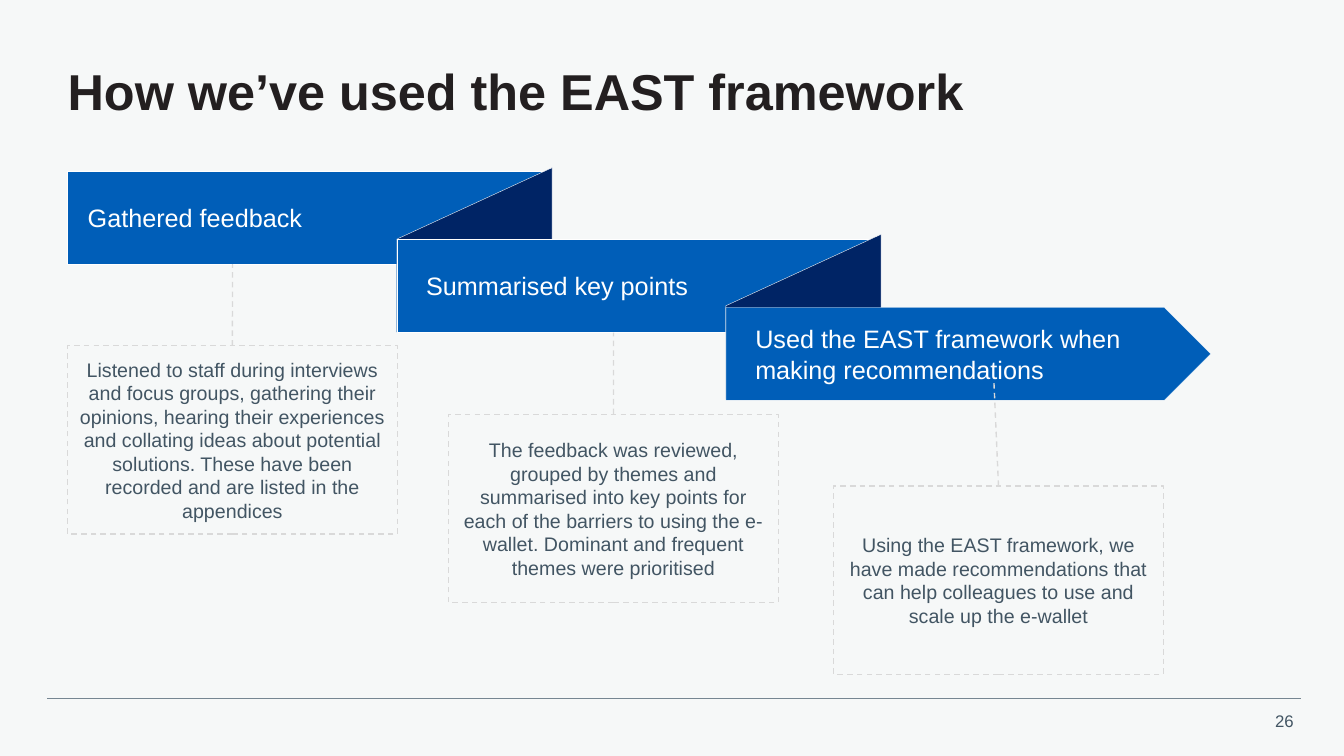
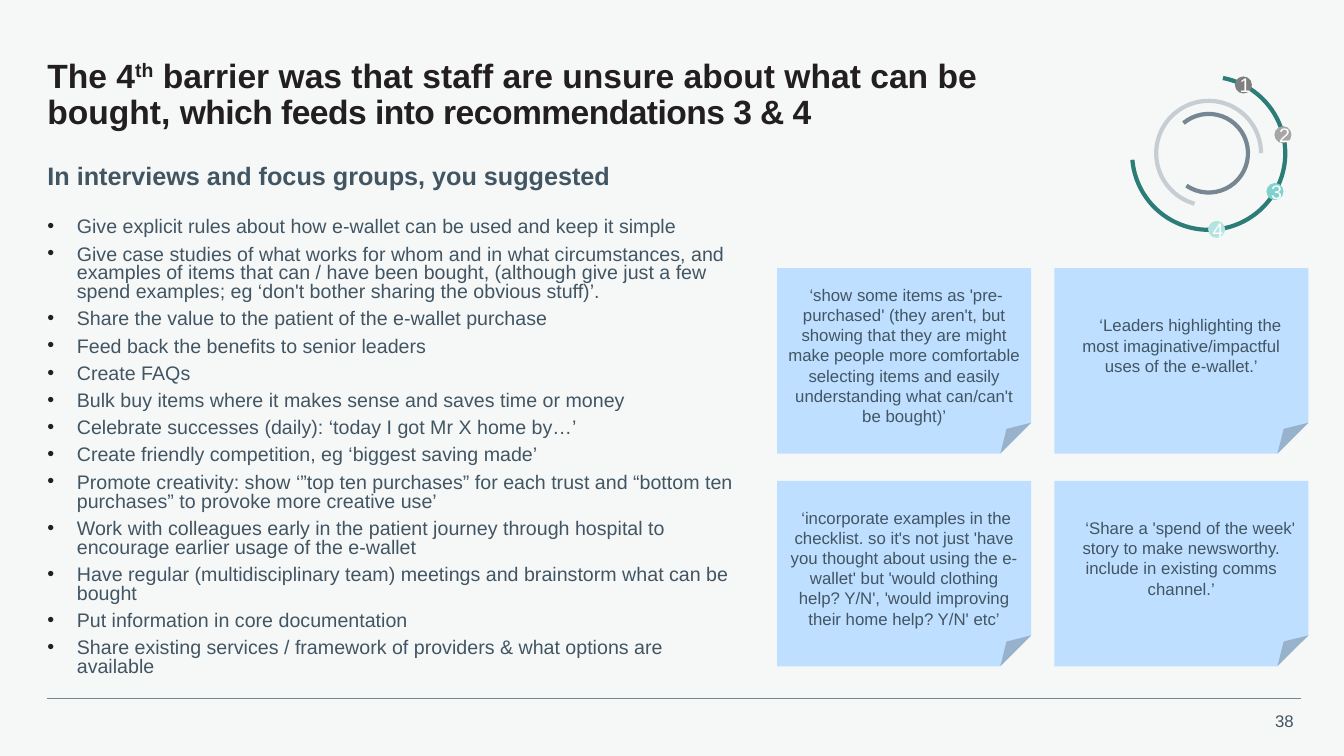
import math

from lxml import etree
from pptx import Presentation
from pptx import util as u
from pptx.dml.color import RGBColor
from pptx.enum import dml, shapes, text
from pptx.oxml.ns import qn

COLOURS = {
    "background": "F6F8F8", "title": "231F20", "body": "425563", "white": "FFFFFF",
    "rule": "768692", "band": "005EB8", "fold": "002465", "dash": "D9D9D9",
    "note": "BEDFFF", "inner": "768692", "middle": "C7CED3", "outer": "2C7D77",
    "dot1": "7F7F7F", "dot2": "A6A6A6", "dot3": "80D2CC", "dot4": "B3E4E0",
}
FONT = "Arial"
CENTER, RIGHT = text.PP_ALIGN.CENTER, text.PP_ALIGN.RIGHT
MIDDLE, TOP = text.MSO_ANCHOR.MIDDLE, text.MSO_ANCHOR.TOP
PRESET = shapes.MSO_SHAPE


def colour(name):
    return RGBColor.from_string(COLOURS[name])


class Deck:
    """Holds the style and the current slide; lengths are percent of the slide."""

    def __init__(self):
        self.presentation = Presentation()
        self.presentation.slide_width = u.Inches(13.33)
        self.presentation.slide_height = u.Inches(7.5)
        self.slide = None

    def x(self, share):
        return u.Emu(round(self.presentation.slide_width * share / 100))

    def y(self, share):
        return u.Emu(round(self.presentation.slide_height * share / 100))

    def box(self, left, top, width, height):
        return self.x(left), self.y(top), self.x(width), self.y(height)

    def new_slide(self, number):
        self.slide = self.presentation.slides.add_slide(self.presentation.slide_layouts[6])
        fill = self.slide.background.fill
        fill.solid()
        fill.fore_color.rgb = colour("background")
        self.line((3.53, 92.4), (96.83, 92.4), "rule", 0.5)
        self.text((93.9, 93.33, 3.1, 4), [str(number)], 12, align=RIGHT, insets=(7.2, 3.6, 7.2, 3.6))

    def set_text(self, shape, paragraphs, size, ink="body", bold=False, align=None,
                 anchor=MIDDLE, insets=(7.2, 3.6, 7.2, 3.6), spacing=None, after=None,
                 bullet=False, first_indent=0):
        """Each paragraph is a string or a list of (text, run attributes)."""
        frame = shape.text_frame
        frame.word_wrap = True
        frame.vertical_anchor = anchor
        (frame.margin_left, frame.margin_top,
         frame.margin_right, frame.margin_bottom) = map(u.Pt, insets)
        for index, content in enumerate(paragraphs):
            paragraph = frame.add_paragraph() if index else frame.paragraphs[0]
            paragraph.alignment = align or text.PP_ALIGN.LEFT
            if spacing:
                paragraph.line_spacing = spacing
            if after:
                paragraph.space_after = u.Pt(after)
            if bullet:
                self.bullet(paragraph)
            elif first_indent:
                paragraph._p.get_or_add_pPr().set("indent", str(u.Pt(first_indent)))
            for words, attributes in [(content, {})] if isinstance(content, str) else content:
                run = paragraph.add_run()
                run.text = words
                run.font.name, run.font.size, run.font.bold = FONT, u.Pt(size), bold
                run.font.color.rgb = colour(ink)
                for key, value in attributes.items():
                    run.font._element.set(key, value)

    def bullet(self, paragraph, hang=21):
        properties = paragraph._p.get_or_add_pPr()
        properties.set("marL", str(u.Pt(hang)))
        properties.set("indent", str(-u.Pt(hang)))
        ink = etree.SubElement(properties, qn("a:buClr"))
        etree.SubElement(ink, qn("a:srgbClr")).set("val", COLOURS["title"])
        etree.SubElement(properties, qn("a:buFont")).set("typeface", FONT)
        etree.SubElement(properties, qn("a:buChar")).set("char", "•")

    def text(self, place, paragraphs, size, insets=(0, 0, 0, 0), anchor=TOP, **style):
        shape = self.slide.shapes.add_textbox(*self.box(*place))
        self.set_text(shape, paragraphs, size, insets=insets, anchor=anchor, **style)

    def title(self, place, content, size):
        self.text(place, [content], size, ink="title", bold=True, anchor=MIDDLE, spacing=0.9)

    def pen(self, line, ink, width, dashed=False):
        line.color.rgb = colour(ink)
        line.width = u.Pt(width)
        if dashed:
            line.dash_style = dml.MSO_LINE.DASH

    def shape(self, preset, place, fill=None, line=None, width=0.25, dashed=False):
        shape = self.slide.shapes.add_shape(preset, *place)
        shape.shadow.inherit = False
        if fill:
            shape.fill.solid()
            shape.fill.fore_color.rgb = colour(fill)
        else:
            shape.fill.background()
        if line:
            self.pen(shape.line, line, width, dashed)
        else:
            shape.line.fill.background()
        return shape

    def line(self, start, end, ink, width, dashed=False, begin=None):
        connector = self.slide.shapes.add_connector(
            shapes.MSO_CONNECTOR.STRAIGHT,
            self.x(start[0]), self.y(start[1]), self.x(end[0]), self.y(end[1]))
        if begin is not None:
            connector.begin_connect(begin, 0)
        self.pen(connector.line, ink, width, dashed)
        etree.SubElement(connector._element.spPr, qn("a:effectLst"))

    def band(self, preset, left, top, words, inset):
        band = self.shape(preset, self.box(left, top, 36.08, 12.27), "band", "white")
        self.set_text(band, [words], 18, ink="white", insets=(inset, 3.6, 7.2, 3.6))

    def fold(self, left, top):
        fold = self.shape(PRESET.PARALLELOGRAM, self.box(left, top, 12.23, 20.53), "fold", "white")
        fold.adjustments[0] = 0.46
        fold.rotation = 270
        fold._element.spPr.find(qn("a:xfrm")).set("flipV", "1")

    def detail(self, left, top, words, line_end):
        place = (left, top, 24.53, 24.93)
        detail = self.shape(PRESET.RECTANGLE, self.box(*place), line="dash", width=1, dashed=True)
        self.set_text(detail, [words], 14, align=CENTER)
        self.line((left + place[2] / 2, top), line_end, "dash", 1, True, detail)

    def note(self, left, top, words, top_inset, first_indent):
        note = self.shape(PRESET.FOLDED_CORNER, self.box(left, top, 18.9, 24.53), "note")
        self.set_text(note, [words], 12, align=CENTER, insets=(7.2, top_inset, 7.2, 3.6),
                      first_indent=first_indent)

    def round_shape(self, preset, centre, diameter, **look):
        side = self.x(diameter)
        left, top = (round(position - side / 2) for position in centre)
        return self.shape(preset, (left, top, side, side), **look)

    def ring(self, centre, diameter, ink, rotation):
        ring = self.round_shape(PRESET.ARC, centre, diameter, line=ink, width=3)
        ring.adjustments[0], ring.adjustments[1] = 63.38, 0
        ring.rotation = rotation

    def dot(self, centre, number):
        dot = self.round_shape(PRESET.OVAL, centre, 1.27, fill=f"dot{number}")
        self.set_text(dot, [str(number)], 14, ink="white", align=CENTER)


def framework_slide(deck):
    deck.new_slide(26)
    deck.title((5.03, 8, 71.85, 8.93), "How we’ve used the EAST framework", 36)

    # Descending ribbon
    steps = [("Gathered feedback", PRESET.RECTANGLE, 14.4),
             ("Summarised key points", PRESET.RECTANGLE, 21),
             ("Used the EAST framework when making recommendations", PRESET.PENTAGON, 21)]
    for index, (words, preset, inset) in enumerate(steps):
        if index:
            deck.fold(29.18 + 24.49 * (index - 1), 22.8 + 8.8 * (index - 1))
        deck.band(preset, 5.03 + 24.49 * index, 22.67 + 9 * index, words, inset)

    # Explanations tied to the ribbon
    details = [
        (5.03, 45.73, "Listened to staff during interviews and focus groups, gathering their opinions, "
         "hearing their experiences and collating ideas about potential solutions. These have been "
         "recorded and are listed in the appendices", (17.3, 34.93)),
        (33.38, 54.8, "The feedback was reviewed, grouped by themes and summarised into key points for "
         "each of the barriers to using the e-wallet. Dominant and frequent themes were prioritised",
         (45.65, 44)),
        (62.03, 64.27, "Using the EAST framework, we have made recommendations that can help colleagues "
         "to use and scale up the e-wallet", (73.95, 50.4)),
    ]
    for detail in details:
        deck.detail(*detail)


def barrier_slide(deck):
    deck.new_slide(38)
    deck.title((3.53, 6.27, 75.9, 12.67), [
        ("The 4", {}), ("th", {"baseline": "30000"}),
        (" barrier was that staff are unsure about what can be bought, ", {}),
        ("which feeds into recommendations 3 & 4", {"spc": "-40"})], 24)

    # Suggestions
    deck.text((3.53, 21.2, 42.15, 5.47), ["In interviews and focus groups, you suggested"], 18, bold=True)
    deck.text((3.53, 28.93, 51.53, 62.67), [
        "Give explicit rules about how e-wallet can be used and keep it simple",
        "Give case studies of what works for whom and in what circumstances, and examples of items "
        "that can / have been bought, (although give just a few spend examples; eg ‘don't bother "
        "sharing the obvious stuff)’.",
        "Share the value to the patient of the e-wallet purchase",
        "Feed back the benefits to senior leaders",
        "Create FAQs",
        "Bulk buy items where it makes sense and saves time or money",
        "Celebrate successes (daily): ‘today I got Mr X home by…’",
        "Create friendly competition, eg ‘biggest saving made’",
        "Promote creativity: show ‘”top ten purchases” for each trust and “bottom ten purchases” "
        "to provoke more creative use’",
        "Work with colleagues early in the patient journey through hospital to encourage earlier "
        "usage of the e-wallet",
        "Have regular (multidisciplinary team) meetings and brainstorm what can be bought",
        "Put information in core documentation",
        "Share existing services / framework of providers & what options are available",
    ], 14, spacing=0.8, after=6, bullet=True)

    # Quotes on notes, two by two
    quotes = [
        "‘show some items as 'pre-purchased' (they aren't, but showing that they are might make "
        "people more comfortable selecting items and easily understanding what can/can't be bought)’",
        "‘Leaders highlighting the most imaginative/impactful uses of the e-wallet.’",
        "‘incorporate examples in the checklist. so it's not just 'have you thought about using the "
        "e-wallet' but 'would clothing help? Y/N', 'would improving their home help? Y/N' etc’",
        "‘Share a 'spend of the week' story to make newsworthy. include in existing comms channel.’",
    ]
    layouts = [(17.6, 3), (3.6, 13)]  # top inset and first-line indent by column
    for index, quote in enumerate(quotes):
        row, column = divmod(index, 2)
        deck.note(57.83 + 20.62 * column, 35.47 + 28.13 * row, quote, *layouts[column])

    # Ring tracker with numbered dots on the outer ring
    centre = deck.x(89.93), deck.y(20.27)
    outer = 11.4
    for diameter, ink, rotation in [(7.8, "middle", 0), (5.85, "inner", 124.5), (outer, "outer", 175.1)]:
        deck.ring(centre, diameter, ink, rotation)
    radius = deck.x(outer / 2)
    for number, degrees in enumerate((-63, -14, 30, 84), 1):
        angle = math.radians(degrees)
        deck.dot((centre[0] + radius * math.cos(angle), centre[1] + radius * math.sin(angle)), number)


def main():
    deck = Deck()
    framework_slide(deck)
    barrier_slide(deck)
    deck.presentation.save("out.pptx")


if __name__ == "__main__":
    main()
